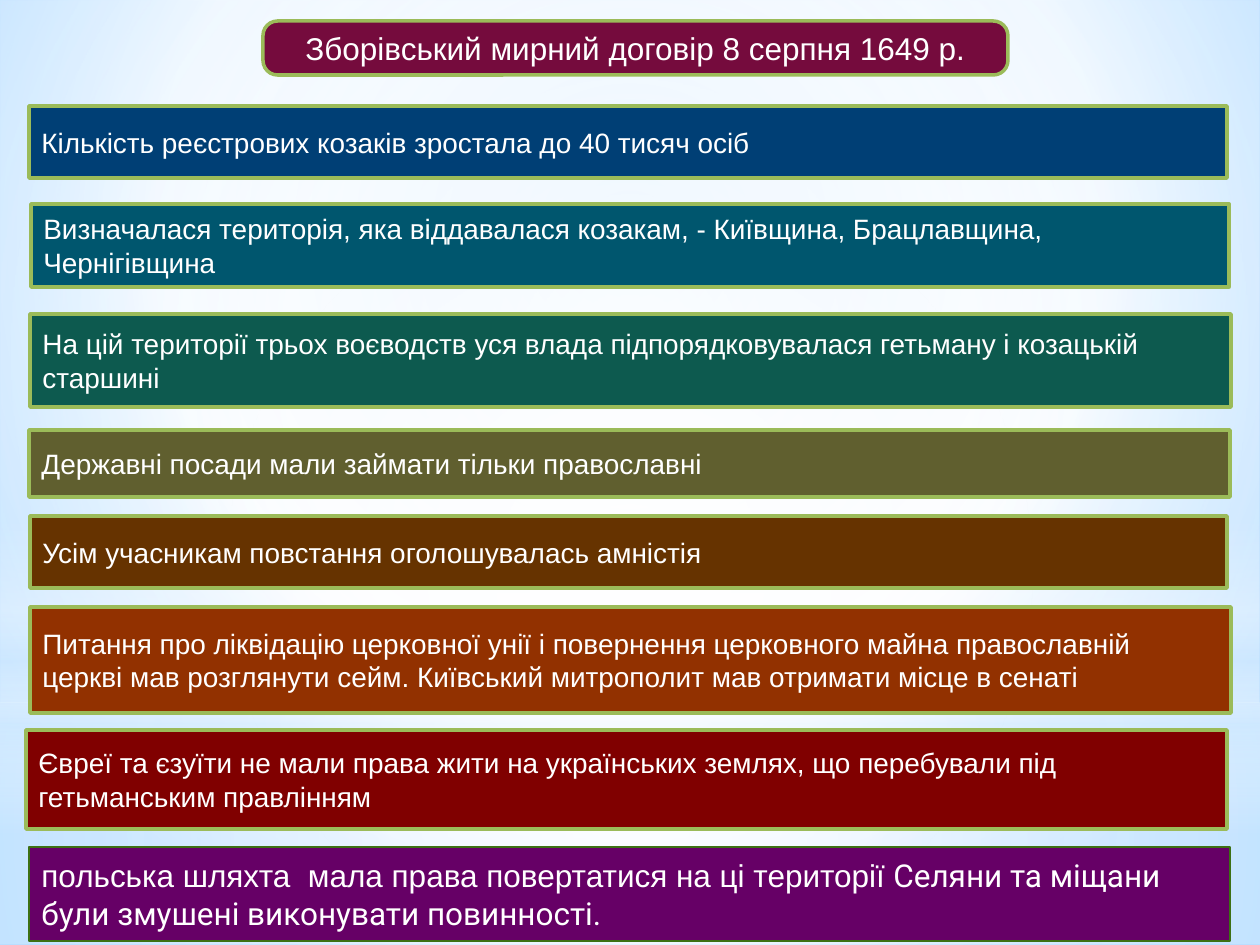
from lxml import etree
from pptx import Presentation, util as u
from pptx.dml.color import RGBColor
from pptx.enum import shapes, text
from pptx.oxml.ns import qn

SCALE = 914400 / 126
WHITE = RGBColor(0xFF, 0xFF, 0xFF)
MIST = RGBColor(0xD6, 0xEC, 0xFF)
SKY = RGBColor(0xC2, 0xE3, 0xFF)
AZURE = RGBColor(0x79, 0xC1, 0xFF)
GREEN = RGBColor(0x9B, 0xBB, 0x59)
FOREST = RGBColor(0x3D, 0x70, 0x14)
PLUM = RGBColor(0x75, 0x0B, 0x3D)
NAVY = RGBColor(0x00, 0x3F, 0x75)
TEAL = RGBColor(0x00, 0x56, 0x6E)
PINE = RGBColor(0x0D, 0x5A, 0x4F)
OLIVE = RGBColor(0x60, 0x5F, 0x2F)
BROWN = RGBColor(0x66, 0x33, 0x00)
RUST = RGBColor(0x92, 0x31, 0x00)
MAROON = RGBColor(0x80, 0x00, 0x00)
PURPLE = RGBColor(0x66, 0x00, 0x66)

RECT = shapes.MSO_SHAPE.RECTANGLE
ROUNDED = shapes.MSO_SHAPE.ROUNDED_RECTANGLE
OVAL = shapes.MSO_SHAPE.OVAL
CENTRE = (50, 50, 50, 50)

TERMS = [
    ((29, 106, 1198, 72), NAVY, "Кількість реєстрових козаків зростала до 40 тисяч осіб"),
    ((31, 204, 1198, 83), TEAL,
     "Визначалася територія, яка віддавалася козакам, - Київщина, Брацлавщина, Чернігівщина"),
    ((30, 314, 1201, 93), PINE,
     "На цій території трьох воєводств уся влада підпорядковувалася гетьману і козацькій старшині"),
    ((29, 430, 1201, 67), OLIVE, "Державні посади мали займати тільки православні"),
    ((30, 516, 1197, 72), BROWN, "Усім учасникам повстання оголошувалась амністія"),
    ((30, 607, 1201, 106), RUST,
     "Питання про ліквідацію церковної унії і повернення церковного майна православній церкві "
     "мав розглянути сейм. Київський митрополит мав отримати місце в сенаті"),
    ((26, 730, 1201, 99), MAROON,
     "Євреї та єзуїти не мали права жити на українських землях, що перебували під "
     "гетьманським правлінням"),
]


def px(length):
    """Turn pixels into EMU."""
    return u.Emu(round(length * SCALE))


class TreatySlide:
    """Holds the style and the current slide."""

    def __init__(self, presentation):
        """Add a blank slide."""
        self.font = "Arial"
        self.slide = presentation.slides.add_slide(presentation.slide_layouts[6])

    def gradient(self, fill, owner, stops, focus=None):
        """Fill with stops of position, colour and opacity, round a focus or downwards."""
        fill.gradient()
        gradient = next(owner.iter(qn("a:gradFill")))
        for child in list(gradient):
            gradient.remove(child)
        stop_list = etree.SubElement(gradient, qn("a:gsLst"))
        for position, colour, opacity in stops:
            stop = etree.SubElement(stop_list, qn("a:gs"), pos=str(position * 1000))
            tint = etree.SubElement(stop, qn("a:srgbClr"), val=str(colour))
            if opacity < 100:
                etree.SubElement(tint, qn("a:alpha"), val=str(opacity * 1000))
        if focus:
            outline = etree.SubElement(gradient, qn("a:path"), path="circle")
            sides = {side: str(value * 1000) for side, value in zip("ltrb", focus)}
            etree.SubElement(outline, qn("a:fillToRect"), **sides)
        else:
            etree.SubElement(gradient, qn("a:lin"), ang="5400000", scaled="0")

    def background(self, stops, focus):
        """Paint the slide background."""
        self.gradient(self.slide.background.fill, self.slide.element, stops, focus)

    def shape(self, kind, box):
        """Add a plain shape without a shadow."""
        shape = self.slide.shapes.add_shape(kind, *map(px, box))
        shape.shadow.inherit = False
        return shape

    def glow(self, kind, box, stops, focus=None):
        """Add a translucent layer."""
        shape = self.shape(kind, box)
        shape.line.fill.background()
        self.gradient(shape.fill, shape.element, stops, focus)

    def panel(self, box, colour, runs, size=16, kind=ROUNDED, corner=0,
              align=text.PP_ALIGN.LEFT, line=GREEN, width=2):
        """Add a filled panel with runs of text and font."""
        shape = self.shape(kind, box)
        if kind == ROUNDED:
            shape.adjustments[0] = corner
        shape.fill.solid()
        shape.fill.fore_color.rgb = colour
        shape.line.color.rgb = line
        shape.line.width = u.Pt(width)
        frame = shape.text_frame
        frame.word_wrap = True
        frame.vertical_anchor = text.MSO_ANCHOR.MIDDLE
        paragraph = frame.paragraphs[0]
        paragraph.alignment = align
        for words, font in runs:
            run = paragraph.add_run()
            run.text = words
            run.font.name = font or self.font
            run.font.size = u.Pt(size)
            run.font.color.rgb = WHITE


def main():
    """Build and save the slide."""
    presentation = Presentation()
    presentation.slide_width, presentation.slide_height = px(1260), px(945)
    treaty = TreatySlide(presentation)
    treaty.background([(0, SKY, 100), (60, WHITE, 100), (100, AZURE, 100)], (20, 10, 20, 60))
    treaty.glow(RECT, (0, 703, 1260, 242),
                [(0, WHITE, 91), (37, WHITE, 76), (100, MIST, 79)], CENTRE)
    treaty.glow(RECT, (0, 0, 1260, 703),
                [(0, WHITE, 89), (48, WHITE, 62), (100, MIST, 79)], CENTRE)
    treaty.glow(RECT, (0, 519, 1260, 315),
                [(0, WHITE, 0), (29, WHITE, 30), (45, MIST, 40),
                 (55, WHITE, 26), (65, MIST, 60), (100, WHITE, 0)])
    treaty.glow(OVAL, (0, 221, 1260, 703), [(0, WHITE, 100), (56, WHITE, 0)], CENTRE)
    treaty.panel((263, 21, 745, 54), PLUM, [("Зборівський мирний договір 8 серпня 1649 р.", None)],
                 size=18, corner=0.27, align=text.PP_ALIGN.CENTER)
    for box, colour, words in TERMS:
        treaty.panel(box, colour, [(words, None)])
    treaty.panel((29, 847, 1201, 94), PURPLE,
                 [("польська шляхта  мала права повертатися на ці території", None),
                  (" Селяни та міщани були змушені виконувати повинності.", "Roboto")],
                 size=18, kind=RECT, line=FOREST, width=1.25)
    presentation.save("out.pptx")


if __name__ == "__main__":
    main()
